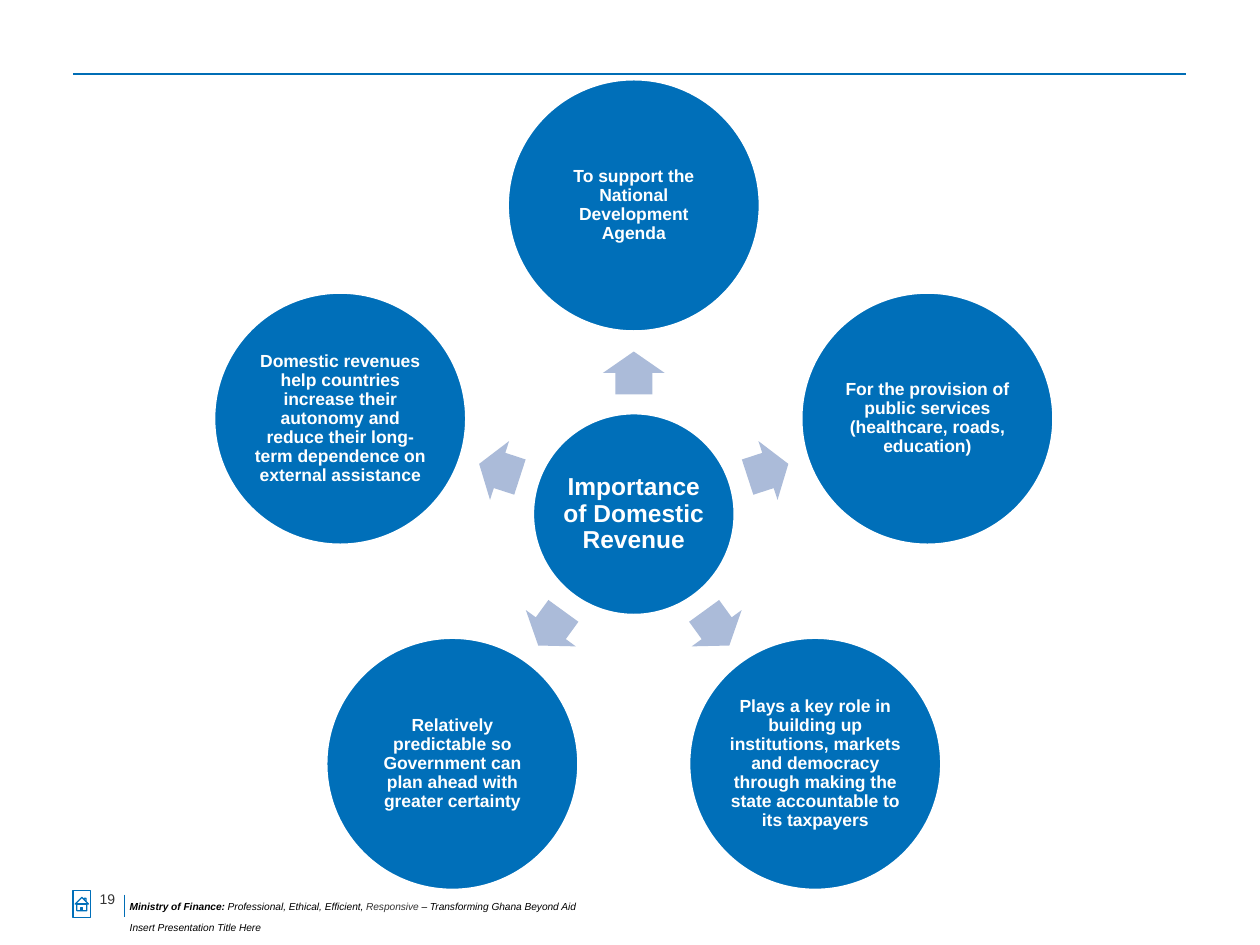
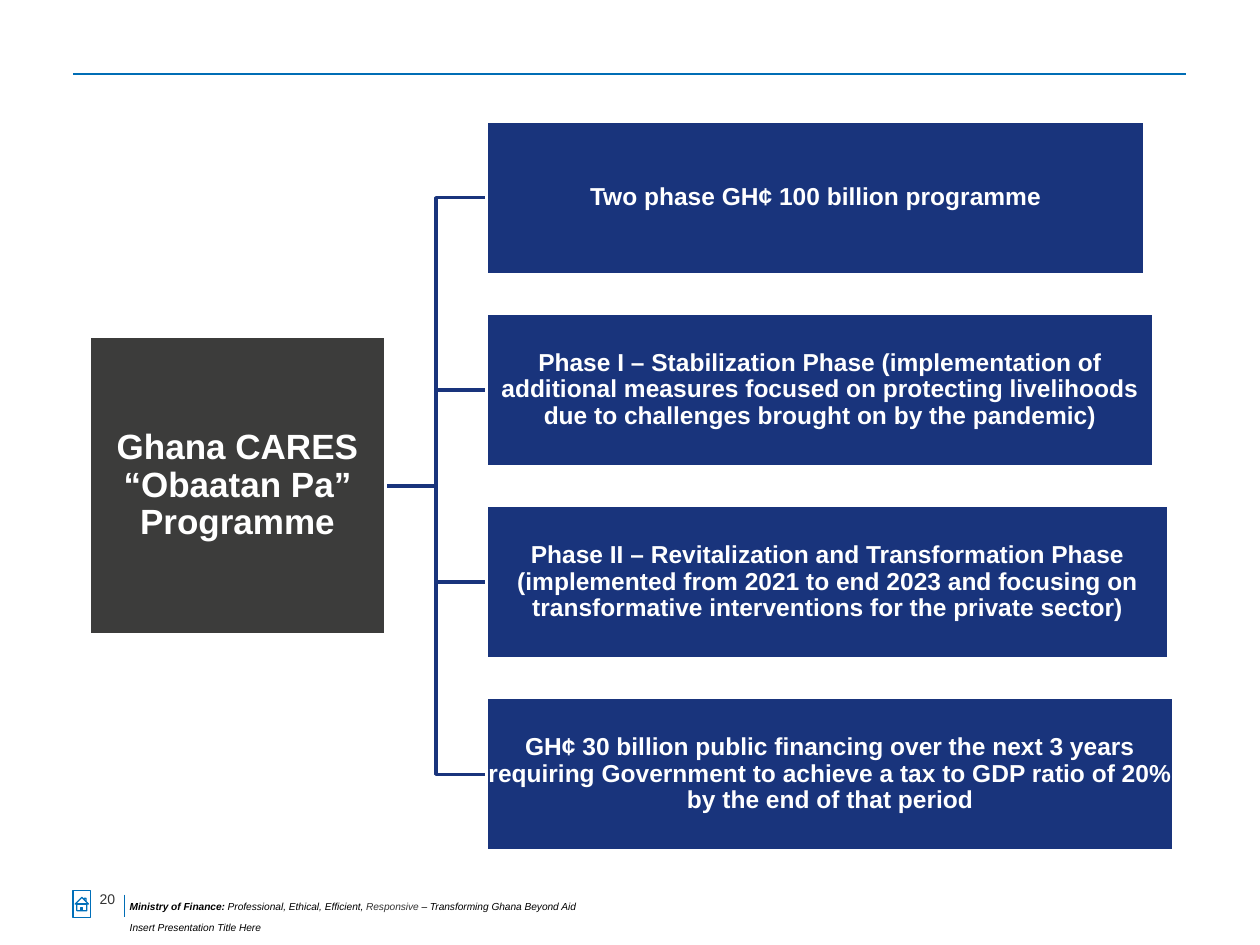
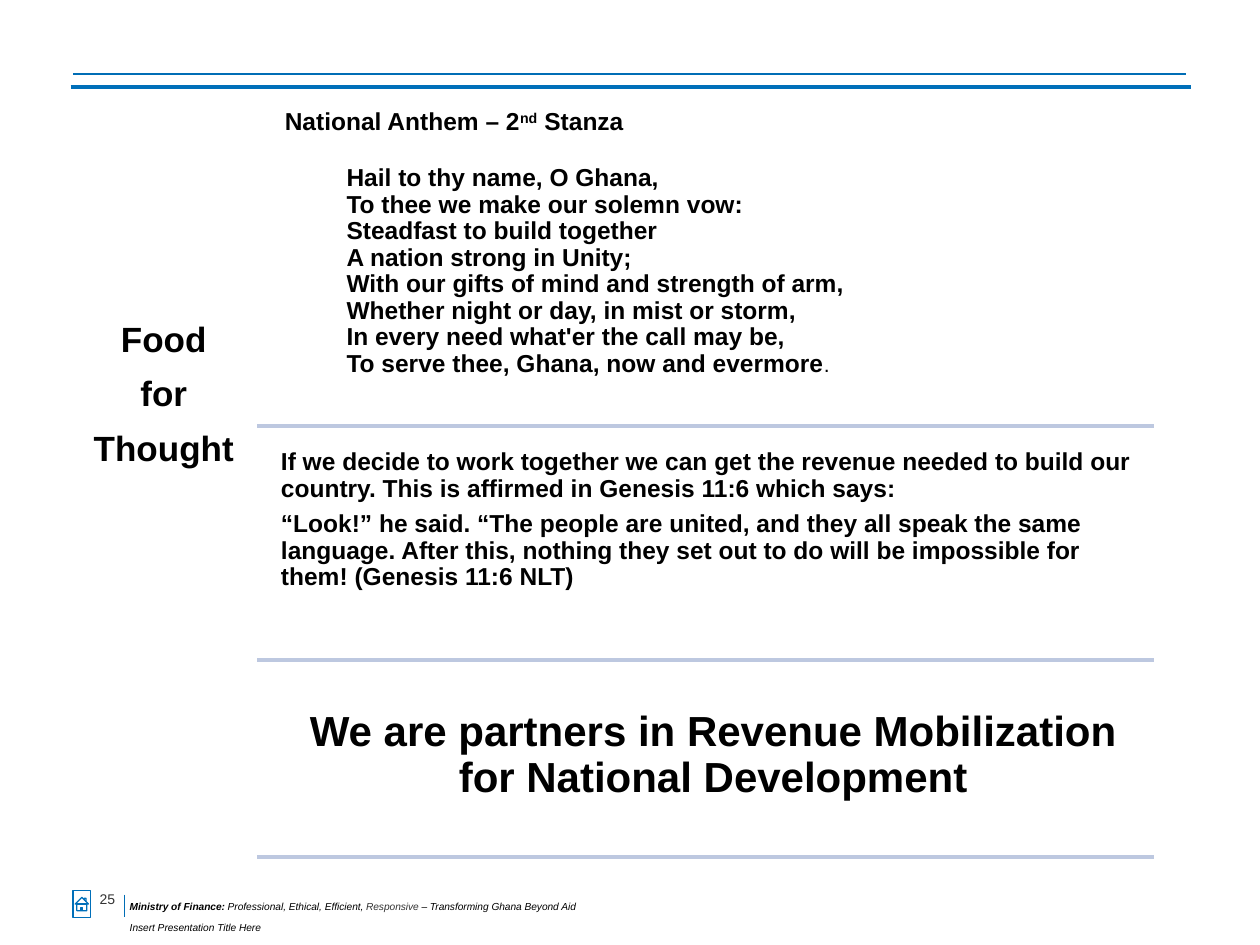
from math import cos, radians, sin

from lxml import etree
from pptx import Presentation
from pptx.dml.color import RGBColor
from pptx.enum.shapes import MSO_CONNECTOR as CONN, MSO_SHAPE as SHAPE
from pptx.enum.text import MSO_ANCHOR as ANCHOR, PP_ALIGN as ALIGN
from pptx.oxml.ns import qn
from pptx.util import Inches, Pt

BLUE = RGBColor(0x00, 0x6F, 0xB9)
RULE = RGBColor(0x00, 0x6D, 0xB5)
NAVY = RGBColor(0x19, 0x34, 0x7C)
CHARCOAL = RGBColor(0x3C, 0x3C, 0x3B)
GREY = RGBColor(0x33, 0x33, 0x33)
ARROW = RGBColor(0xAB, 0xBB, 0xD9)
DIVIDER = RGBColor(0xBD, 0xC8, 0xE0)
WHITE = RGBColor(0xFF, 0xFF, 0xFF)
BLACK = RGBColor(0x00, 0x00, 0x00)
FONT = "Arial"


def add_line(s, x1, y1, x2, y2, color, width, kind=CONN.STRAIGHT):
    line = s.shapes.add_connector(kind, Inches(x1), Inches(y1), Inches(x2), Inches(y2))
    line.line.color.rgb = color
    line.line.width = Pt(width)
    etree.SubElement(line._element.spPr, qn("a:effectLst"))
    return line


def set_text(sp, texts, size, color, align=ALIGN.LEFT, inset=0.05, spacing=0.9, bold=True):
    tf = sp.text_frame
    tf.word_wrap = True
    tf.margin_left = tf.margin_right = tf.margin_top = tf.margin_bottom = Inches(inset)
    for i, text in enumerate(texts):
        p = tf.paragraphs[0] if i == 0 else tf.add_paragraph()
        p.text = text
        p.alignment = align
        p.line_spacing = spacing
        p.space_after = Pt(round(size * 0.35))
        p.font.name = FONT
        p.font.size = Pt(size)
        p.font.bold = bold
        p.font.color.rgb = color
    return tf


prs = Presentation()
prs.slide_width = Inches(10)
prs.slide_height = Inches(7.5)

footer = [
    [("Ministry of Finance:", True, BLACK),
     (" Professional, Ethical, Efficient, ", False, BLACK),
     ("Responsive", False, GREY),
     (" – Transforming Ghana Beyond Aid", False, BLACK)],
    [("Insert Presentation Title Here", False, BLACK)],
]
slides = []
for number in ("19", "20", "25"):
    s = prs.slides.add_slide(prs.slide_layouts[6])
    slides.append(s)
    sp = s.shapes.add_textbox(Inches(1.03), Inches(7.13), Inches(7.3), Inches(0.22))
    tf = set_text(sp, ["", ""], 10, BLACK, inset=0, spacing=1.0, bold=False)
    for p, parts in zip(tf.paragraphs, footer):
        p.space_after = Pt(0)
        p.font.italic = True
        for text, bold, color in parts:
            r = p.add_run()
            r.text = text
            r.font.bold = bold
            r.font.color.rgb = color
            r._r.get_or_add_rPr().set("baseline", "30000")
    add_line(s, 0.99, 7.1, 0.99, 7.28, RULE, 0.75)
    add_line(s, 0.58, 0.59, 9.41, 0.59, RULE, 1)
    home = s.shapes.add_shape(SHAPE.ACTION_BUTTON_HOME, Inches(0.58), Inches(7.07),
                              Inches(0.14), Inches(0.21))
    home.shadow.inherit = False
    home.fill.background()
    home.line.color.rgb = BLUE
    home.line.width = Pt(0.75)
    sp = s.shapes.add_textbox(Inches(0.79), Inches(7.07), Inches(0.45), Inches(0.2))
    set_text(sp, [number], 8, GREY, inset=0, spacing=1.0, bold=False)

s = slides[0]
CX, CY = 5.03, 4.08
reasons = [
    "To support the National Development Agenda",
    "For the provision of public services (healthcare, roads, education)",
    "Plays a key role in building up institutions, markets and democracy "
    "through making the state accountable to its taxpayers",
    "Relatively predictable so Government can plan ahead with greater certainty",
    "Domestic revenues help countries increase their autonomy and reduce their "
    "long-term dependence on external assistance",
]
circles = [(CX, CY, 1.61, 14, "Importance of Domestic Revenue")]
for i, reason in enumerate(reasons):
    angle = 360 / len(reasons) * i - 90
    dx, dy = cos(radians(angle)), sin(radians(angle))
    circles.append((CX + 2.45 * dx, CY + 2.45 * dy, 2.01, 10, reason))
    arrow = s.shapes.add_shape(SHAPE.RIGHT_ARROW, Inches(CX + 1.12 * dx - 0.17),
                               Inches(CY + 1.12 * dy - 0.245), Inches(0.34), Inches(0.49))
    arrow.adjustments[0] = 0.6
    arrow.adjustments[1] = 0.5
    arrow.rotation = angle % 360
    arrow.shadow.inherit = False
    arrow.fill.solid()
    arrow.fill.fore_color.rgb = ARROW
    arrow.line.fill.background()
for x, y, d, size, text in circles:
    sp = s.shapes.add_shape(SHAPE.OVAL, Inches(x - d / 2), Inches(y - d / 2), Inches(d), Inches(d))
    sp.shadow.inherit = False
    sp.fill.solid()
    sp.fill.fore_color.rgb = BLUE
    sp.line.color.rgb = WHITE
    sp.line.width = Pt(2)
    tf = set_text(sp, [text], size, WHITE, ALIGN.CENTER, 0.01)
    tf.vertical_anchor = ANCHOR.MIDDLE

s = slides[1]
phases = [
    (5.23, "Two phase GH¢ 100 billion programme"),
    (5.3, "Phase I – Stabilization Phase (implementation of additional measures focused on "
          "protecting livelihoods due to challenges brought on by the pandemic)"),
    (5.42, "Phase II – Revitalization and Transformation Phase (implemented from 2021 to end "
           "2023 and focusing on transformative interventions for the private sector)"),
    (5.46, "GH¢ 30 billion public financing over the next 3 years requiring Government to "
           "achieve a tax to GDP ratio of 20% by the end of that period"),
]
boxes = [(0.71, 2.67, 2.35, 2.37, CHARCOAL, 20, "Ghana CARES “Obaatan Pa” Programme")]
elbows = []
for i, (w, text) in enumerate(phases):
    top = 0.96 + 1.525 * i
    boxes.append((3.86, top, w, 1.22, NAVY, 14, text))
    elbows.append(add_line(s, 3.06, 3.86, 3.86, top + 0.61, NAVY, 2, CONN.ELBOW))
drawn = []
for x, y, w, h, fill, size, text in boxes:
    sp = s.shapes.add_shape(SHAPE.RECTANGLE, Inches(x), Inches(y), Inches(w), Inches(h))
    sp.shadow.inherit = False
    sp.fill.solid()
    sp.fill.fore_color.rgb = fill
    sp.line.color.rgb = WHITE
    sp.line.width = Pt(2)
    tf = set_text(sp, [text], size, WHITE, ALIGN.CENTER, 0.01)
    tf.vertical_anchor = ANCHOR.MIDDLE
    drawn.append(sp)
for elbow, box in zip(elbows, drawn[1:]):
    elbow.begin_connect(drawn[0], 3)
    elbow.end_connect(box, 1)

s = slides[2]
add_line(s, 0.56, 0.69, 9.45, 0.69, BLUE, 2)
for y in (3.38, 5.24, 6.8):
    add_line(s, 2.04, y, 9.16, y, DIVIDER, 2)

sp = s.shapes.add_textbox(Inches(0.56), Inches(0.69), Inches(1.48), Inches(6.23))
tf = set_text(sp, ["Food", "for", "Thought"], 20, BLACK, ALIGN.CENTER, spacing=1.0)
tf.margin_top = Inches(1.83)

verse = [
    "Hail to thy name, O Ghana,",
    "To thee we make our solemn vow:",
    "Steadfast to build together",
    "A nation strong in Unity;",
    "With our gifts of mind and strength of arm,",
    "Whether night or day, in mist or storm,",
    "In every need what'er the call may be,",
    "To serve thee, Ghana, now and evermore",
]
sp = s.shapes.add_textbox(Inches(2.17), Inches(0.82), Inches(6.98), Inches(2.56))
tf = set_text(sp, ["National Anthem – 2", "\v".join(verse)], 14, BLACK)
heading, stanza = tf.paragraphs
for p, indent in ((heading, 0.04), (stanza, 0.53)):
    p._p.get_or_add_pPr().set("marL", str(Inches(indent)))
stanza.space_before = Pt(12)
r = heading.add_run()
r.text = "nd"
r._r.get_or_add_rPr().set("baseline", "30000")
heading.add_run().text = " Stanza"
r = stanza.add_run()
r.text = "."
r.font.size = Pt(12)
r.font.bold = False

sp = s.shapes.add_textbox(Inches(2.17), Inches(3.51), Inches(7.01), Inches(1.73))
set_text(sp, [
    "If we decide to work together we can get the revenue needed to build our country. "
    "This is affirmed in Genesis 11:6 which says:",
    "“Look!” he said. “The people are united, and they all speak the same language. After "
    "this, nothing they set out to do will be impossible for them! (Genesis 11:6 NLT)",
], 14, BLACK, inset=0.06)

sp = s.shapes.add_textbox(Inches(2.17), Inches(5.37), Inches(6.98), Inches(1.42))
tf = set_text(sp, ["We are partners in Revenue Mobilization for National Development"],
              24, BLACK, ALIGN.CENTER)
tf.margin_top = Inches(0.27)

prs.save("out.pptx")
